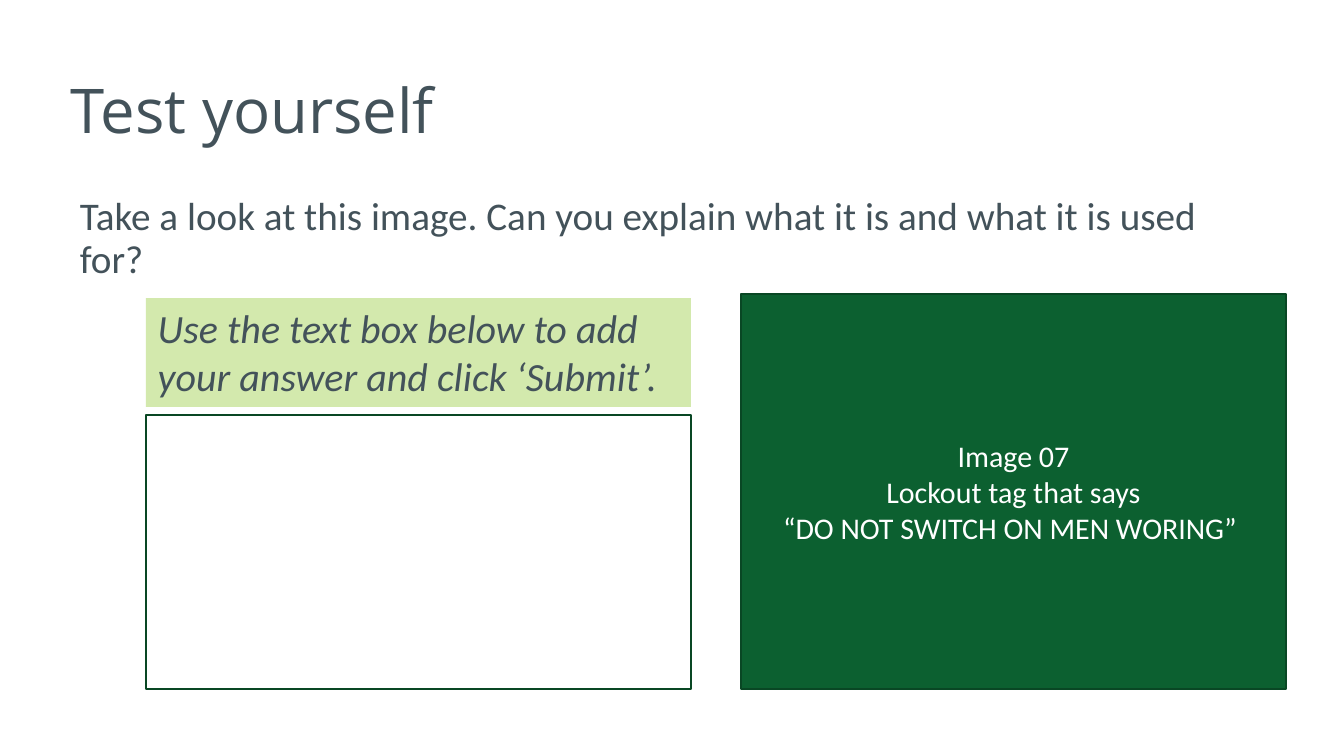
from dataclasses import dataclass

from pptx import Presentation
from pptx.dml.color import RGBColor
from pptx.enum.shapes import MSO_SHAPE
from pptx.enum.text import MSO_ANCHOR, PP_ALIGN
from pptx.util import Pt

EMU_PER_PX = 7620
RECTANGLE = MSO_SHAPE.RECTANGLE
TOP, MIDDLE = MSO_ANCHOR.TOP, MSO_ANCHOR.MIDDLE
LEFT, CENTER = PP_ALIGN.LEFT, PP_ALIGN.CENTER


@dataclass(frozen=True)
class Theme:
    heading_font: str = "Open Sans"
    body_font: str = "Calibri"
    slate: str = "43525A"
    white: str = "FFFFFF"
    lime: str = "D3E9AD"
    green: str = "0C6030"
    dark_green: str = "094724"
    title_size: float = 37
    question_size: float = 23.5
    hint_size: float = 24
    caption_size: float = 18
    border_width: float = 1


def px(length):
    return length * EMU_PER_PX


def write_text(frame, *lines, font, size, color, italic=False, align=LEFT,
               anchor=TOP, line_spacing=None, space_before=0):
    """Fill a text frame with one paragraph per line."""
    frame.word_wrap = True
    frame.vertical_anchor = anchor
    for index, line in enumerate(lines):
        para = frame.add_paragraph() if index else frame.paragraphs[0]
        para.alignment = align
        para.line_spacing = line_spacing
        para.space_before = Pt(space_before)
        span = para.add_run()
        span.text = line
        span.font.name = font
        span.font.size = Pt(size)
        span.font.italic = italic
        span.font.color.rgb = RGBColor.from_string(color)


class SlideBuilder:
    def __init__(self, deck, theme):
        self.theme = theme
        self.page = deck.slides.add_slide(deck.slide_layouts[6])

    def text(self, bounds, *lines, **style):
        box = self.page.shapes.add_textbox(*map(px, bounds))
        write_text(box.text_frame, *lines, **style)

    def panel(self, bounds, fill, *lines, border=None, **style):
        box = self.page.shapes.add_shape(RECTANGLE, *map(px, bounds))
        box.shadow.inherit = False
        box.fill.solid()
        box.fill.fore_color.rgb = RGBColor.from_string(fill)
        if border:
            box.line.color.rgb = RGBColor.from_string(border)
            box.line.width = Pt(self.theme.border_width)
        else:
            box.line.fill.background()
        if lines:
            write_text(box.text_frame, *lines, **style)


def main():
    theme = Theme()
    deck = Presentation()
    deck.slide_width, deck.slide_height = px(1344), px(756)
    slide = SlideBuilder(deck, theme)

    slide.text((59, 41, 1159, 146), "Test yourself", font=theme.heading_font,
               size=theme.title_size, color=theme.slate, anchor=MIDDLE,
               line_spacing=0.9)
    slide.text((68, 191, 1208, 124),
               "Take a look at this image. Can you explain what it is and what it is used for?",
               font=theme.body_font, size=theme.question_size, color=theme.slate,
               line_spacing=0.9, space_before=8.4)

    answer_left, image_left, panel_width = 146, 741, 545
    slide.panel((answer_left, 298, panel_width, 109), theme.lime,
                "Use the text box below to add your answer and click ‘Submit’.",
                font=theme.body_font, size=theme.hint_size, color=theme.slate,
                italic=True)
    slide.panel((answer_left, 415, panel_width, 274), theme.white,
                border=theme.dark_green)
    slide.panel((image_left, 294, panel_width, 395), theme.green,
                "Image 07", "Lockout tag that says",
                "“DO NOT SWITCH ON MEN WORING” ",
                border=theme.dark_green, font=theme.body_font,
                size=theme.caption_size, color=theme.white, align=CENTER,
                anchor=MIDDLE)

    deck.save("out.pptx")


if __name__ == "__main__":
    main()
